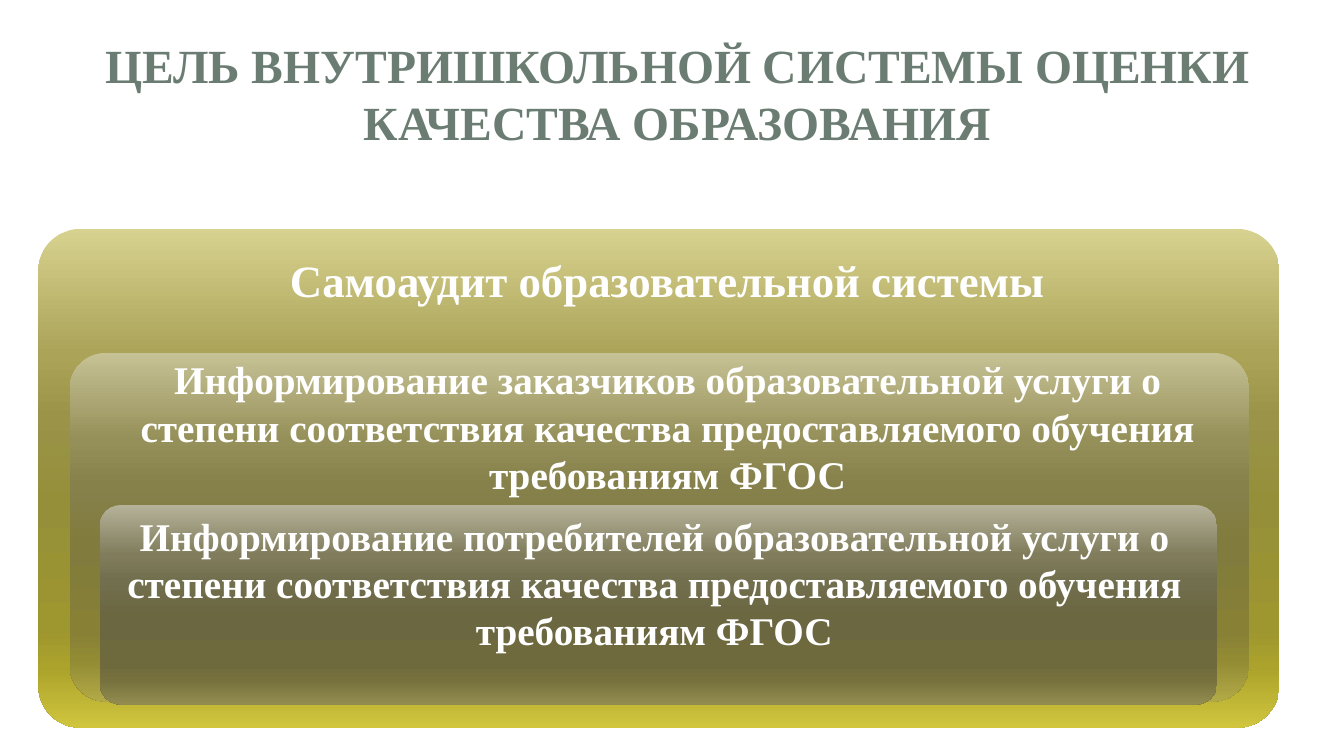
import pptx
import pptx.util
import pptx.dml.color
import pptx.enum.shapes
import pptx.enum.text
import pptx.oxml
import pptx.oxml.ns
from pptx.util import Inches


def rgb(value):
    return pptx.dml.color.RGBColor.from_string(value)


class Deck:
    font = "Times New Roman"
    title_color = "6B7D72"
    text_color = "FFFFFF"
    stops = (0, 25, 38, 55, 80, 88, 100)

    def __init__(self, prs):
        self.s = prs.slides.add_slide(prs.slide_layouts[5])

    def add_text(self, tf, text, size, color):
        tf.word_wrap = True
        p = tf.paragraphs[0]
        p.alignment = pptx.enum.text.PP_ALIGN.CENTER
        r = p.add_run()
        r.text = text
        r.font.name = self.font
        r.font.size = pptx.util.Pt(size)
        r.font.bold = True
        r.font.color.rgb = rgb(color)

    def title(self, box, text, size):
        sp = self.s.shapes.title
        sp.left, sp.top, sp.width, sp.height = map(Inches, box)
        sp.text_frame.vertical_anchor = pptx.enum.text.MSO_ANCHOR.MIDDLE
        self.add_text(sp.text_frame, text, size, self.title_color)

    def panel(self, box, corner, colors):
        sp = self.s.shapes.add_shape(
            pptx.enum.shapes.MSO_SHAPE.ROUNDED_RECTANGLE, *map(Inches, box))
        sp.adjustments[0] = corner
        sp.shadow.inherit = False
        sp.line.fill.background()
        sp.fill.gradient()
        sp.fill.gradient_angle = 270
        # Replace the default stops with the full colour ramp
        stops = "".join(
            f'<a:gs pos="{pos * 1000}"><a:srgbClr val="{color}"/></a:gs>'
            for pos, color in zip(self.stops, colors))
        ns = pptx.oxml.ns.nsdecls("a")
        old = sp._element.spPr.find(".//" + pptx.oxml.ns.qn("a:gsLst"))
        old.getparent().replace(
            old, pptx.oxml.parse_xml(f"<a:gsLst {ns}>{stops}</a:gsLst>"))

    def caption(self, box, text, size):
        sp = self.s.shapes.add_textbox(*map(Inches, box))
        self.add_text(sp.text_frame, text, size, self.text_color)


def main():
    prs = pptx.Presentation()
    prs.slide_width, prs.slide_height = Inches(13.33), Inches(7.5)
    deck = Deck(prs)

    # Title
    deck.title((0.44, 0.18, 12.56, 1.48),
               "ЦЕЛЬ ВНУТРИШКОЛЬНОЙ СИСТЕМЫ ОЦЕНКИ КАЧЕСТВА ОБРАЗОВАНИЯ", 34)

    # Nested panels, outermost first
    panels = [
        ((0.38, 2.27, 12.31, 4.95), 0.085,
         "D8D290 AAA358 9A9348 958F39 9E962F ACA32C D0C53D"),
        ((0.69, 3.5, 11.7, 3.46), 0.105,
         "C7C295 959059 86814B 817B3D 878035 928B34 B2A946"),
        ((0.99, 5.01, 11.08, 1.98), 0.105,
         "B5B299 807C5C 726F4F 6B6741 6E6A3D 77723D 928C50"),
    ]
    for box, corner, colors in panels:
        deck.panel(box, corner, colors.split())

    # Panel captions
    deck.caption((1.87, 2.46, 9.5, 0.64),
                 "Самоаудит образовательной системы", 32)
    audiences = [("заказчиков", (1.11, 3.48, 11.02, 1.51)),
                 ("потребителей", (1.11, 5.03, 10.76, 1.85))]
    for audience, box in audiences:
        deck.caption(box, f"Информирование {audience} образовательной услуги о "
                     "степени соответствия качества предоставляемого обучения "
                     "требованиям ФГОС", 28)

    prs.save("out.pptx")


if __name__ == "__main__":
    main()
